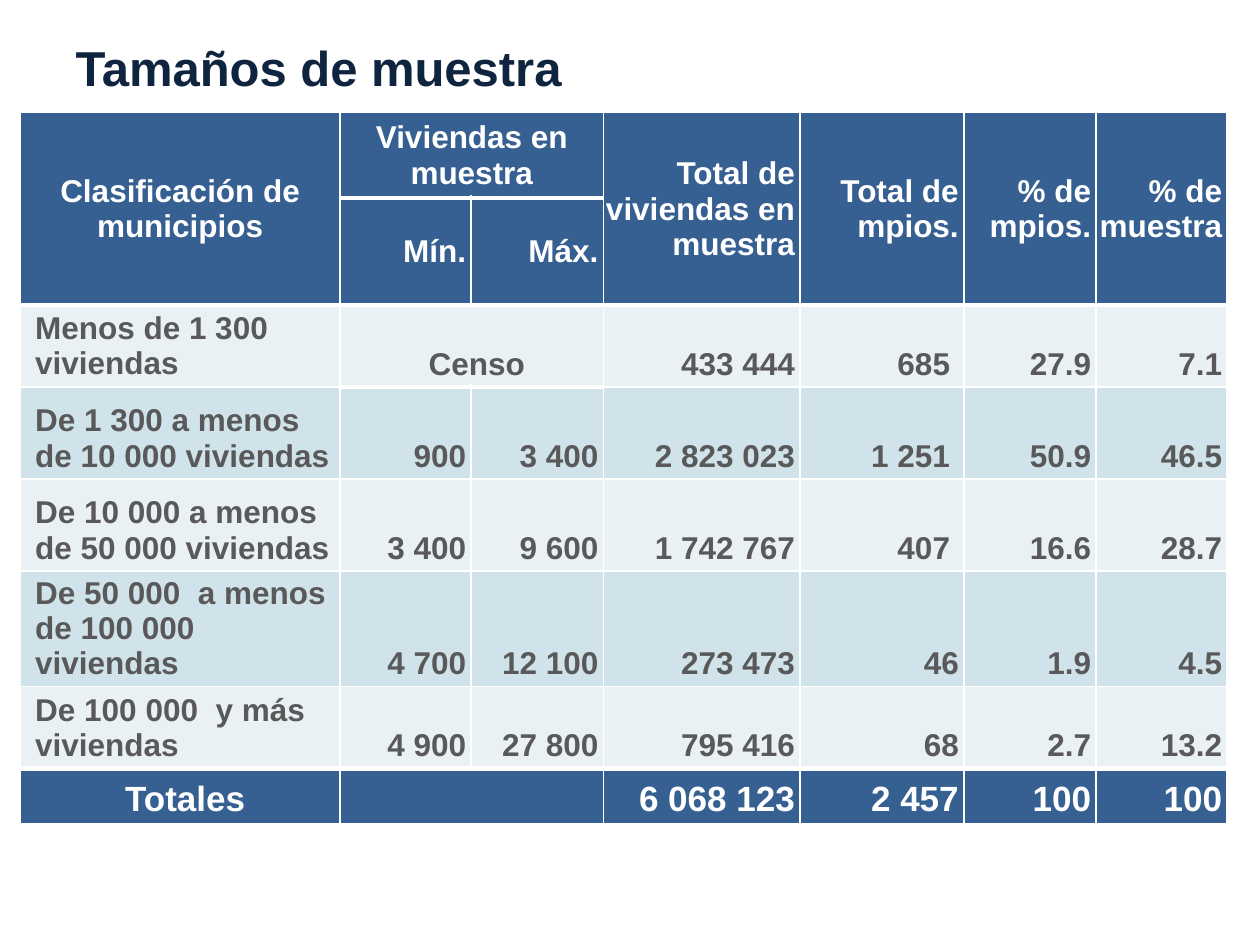
from lxml import etree
from pptx import Presentation
from pptx.dml.color import RGBColor
from pptx.enum.text import MSO_ANCHOR, MSO_AUTO_SIZE, PP_ALIGN
from pptx.oxml import parse_xml
from pptx.oxml.ns import nsdecls, qn
from pptx.util import Inches, Pt

LEFT, CENTER, RIGHT = PP_ALIGN.LEFT, PP_ALIGN.CENTER, PP_ALIGN.RIGHT
TOP, MIDDLE, BOTTOM = MSO_ANCHOR.TOP, MSO_ANCHOR.MIDDLE, MSO_ANCHOR.BOTTOM

FONT = "Arial"
NAVY, BLUE, WHITE, GRAY = "0F243E", "376092", "FFFFFF", "595959"
BANDS = ("E9F1F5", "D0E3EA")

COLUMNS = (2.54, 1.04, 1.05, 1.56, 1.3, 1.05, 1.04)
ROWS = (0.68, 0.47, 0.65, 0.73, 0.73, 0.74, 0.65, 0.44)
HEADER_ROWS, CENSUS_ROW, TOTAL_ROW = 2, 2, len(ROWS) - 1
RANGE_COLUMNS, COUNT_COLUMN = (1, 2), 4
# Each merge: first row, first column, last row, last column
MERGES = [(0, column, 1, column) for column in (0, 3, 4, 5, 6)]
MERGES += [(row, 1, row, 2) for row in (0, CENSUS_ROW, TOTAL_ROW)]

CONTENT = (
    ("Clasificación de municipios", "Viviendas en muestra", "",
     "Total de viviendas en muestra", "Total de mpios.", "% de mpios.", "% de muestra"),
    ("", "Mín.", "Máx.", "", "", "", ""),
    ("Menos de 1 300 viviendas", "Censo", "", "433 444", "685", "27.9", "7.1"),
    ("De 1 300 a menos de 10 000 viviendas", "900", "3 400", "2 823 023", "1 251", "50.9", "46.5"),
    ("De 10 000 a menos de 50 000 viviendas", "3 400", "9 600", "1 742 767", "407", "16.6", "28.7"),
    ("De 50 000  a menos de 100 000 viviendas", "4 700", "12 100", "273 473", "46", "1.9", "4.5"),
    ("De 100 000  y más viviendas", "4 900", "27 800", "795 416", "68", "2.7", "13.2"),
    ("Totales", "", "", "6 068 123", "2 457", "100", "100"),
)


def color(value):
    return RGBColor.from_string(value)


def set_margins(target, left, top, right, bottom):
    target.margin_left, target.margin_top = Inches(left), Inches(top)
    target.margin_right, target.margin_bottom = Inches(right), Inches(bottom)


def add_span(para, text, size, ink):
    span = para.add_run()
    span.text = text
    span.font.name, span.font.size, span.font.bold = FONT, Pt(size), True
    span.font.color.rgb = color(ink)
    return span


def add_text_shadow(span):
    effects = parse_xml(
        f'<a:effectLst {nsdecls("a")}><a:outerShdw blurRad="38100" dist="38100" '
        'dir="2700000" algn="tl"><a:srgbClr val="000000"><a:alpha val="43137"/>'
        '</a:srgbClr></a:outerShdw></a:effectLst>')
    span.font.fill._xPr.find(qn("a:solidFill")).addnext(effects)


def place_title(page, box):
    title = page.shapes.title
    title.left, title.top, title.width, title.height = map(Inches, box)
    frame = title.text_frame
    frame.word_wrap, frame.auto_size = True, MSO_AUTO_SIZE.NONE
    frame.vertical_anchor = TOP
    set_margins(frame, 0.1, 0.09, 0.1, 0)
    para = frame.paragraphs[0]
    para.alignment = LEFT
    add_text_shadow(add_span(para, "Tamaños de muestra", 28, NAVY))


def top_edge_width(row, column):
    """Thick rules bound the header, the totals and the range columns."""
    full_rule = row in (HEADER_ROWS, TOTAL_ROW)
    range_rule = row in (1, CENSUS_ROW + 1) and column in RANGE_COLUMNS
    return 3 if full_rule or range_rule else 1


def add_borders(cell, row, column):
    widths = {"lnL": 1, "lnR": 1, "lnT": top_edge_width(row, column),
              "lnB": top_edge_width(row + 1, column)}
    properties = cell._tc.get_or_add_tcPr()
    for side, width in widths.items():
        line = etree.SubElement(properties, qn(f"a:{side}"), w=str(Pt(width)))
        fill = etree.SubElement(line, qn("a:solidFill"))
        etree.SubElement(fill, qn("a:srgbClr"), val=WHITE)


def cell_alignment(row, column):
    if column == 0:
        return CENTER if row < HEADER_ROWS or row == TOTAL_ROW else LEFT
    return CENTER if column == 1 and row in (0, CENSUS_ROW) else RIGHT


def format_cell(cell, row, column):
    header, total = row < HEADER_ROWS, row == TOTAL_ROW
    alignment = cell_alignment(row, column)
    add_borders(cell, row, column)
    cell.fill.solid()
    cell.fill.fore_color.rgb = color(
        BLUE if header or total else BANDS[(row - HEADER_ROWS) % 2])
    if header:
        cell.vertical_anchor = MIDDLE
        set_margins(cell, 0.01, 0.01, 0.04 if alignment == RIGHT else 0.01, 0)
    else:
        cell.vertical_anchor = MIDDLE if (row, column) == (CENSUS_ROW, 0) else BOTTOM
        # The first counts stand slightly away from the column edge
        indented = column == COUNT_COLUMN and row in range(2, 5)
        set_margins(cell, 0.12, 0.04, 0.11 if indented else 0.04, 0.04)
    text = CONTENT[row][column]
    if text:
        para = cell.text_frame.paragraphs[0]
        para.alignment = alignment
        add_span(para, text, 20 if total else 18, WHITE if header or total else GRAY)


def place_sample_table(page, left, top):
    table = page.shapes.add_table(
        len(ROWS), len(COLUMNS), Inches(left), Inches(top),
        Inches(sum(COLUMNS)), Inches(sum(ROWS))).table
    table.first_row = table.horz_banding = False
    for column, width in zip(table.columns, COLUMNS):
        column.width = Inches(width)
    for row, height in zip(table.rows, ROWS):
        row.height = Inches(height)
    for first_row, first_column, last_row, last_column in MERGES:
        table.cell(first_row, first_column).merge(table.cell(last_row, last_column))
    for row in range(len(ROWS)):
        for column in range(len(COLUMNS)):
            format_cell(table.cell(row, column), row, column)


def main():
    deck = Presentation()
    deck.slide_width, deck.slide_height = Inches(10), Inches(7.5)
    page = deck.slides.add_slide(deck.slide_layouts[5])
    place_title(page, (0.5, 0.21, 9, 0.47))
    place_sample_table(page, 0.16, 0.89)
    deck.save("out.pptx")


if __name__ == "__main__":
    main()
